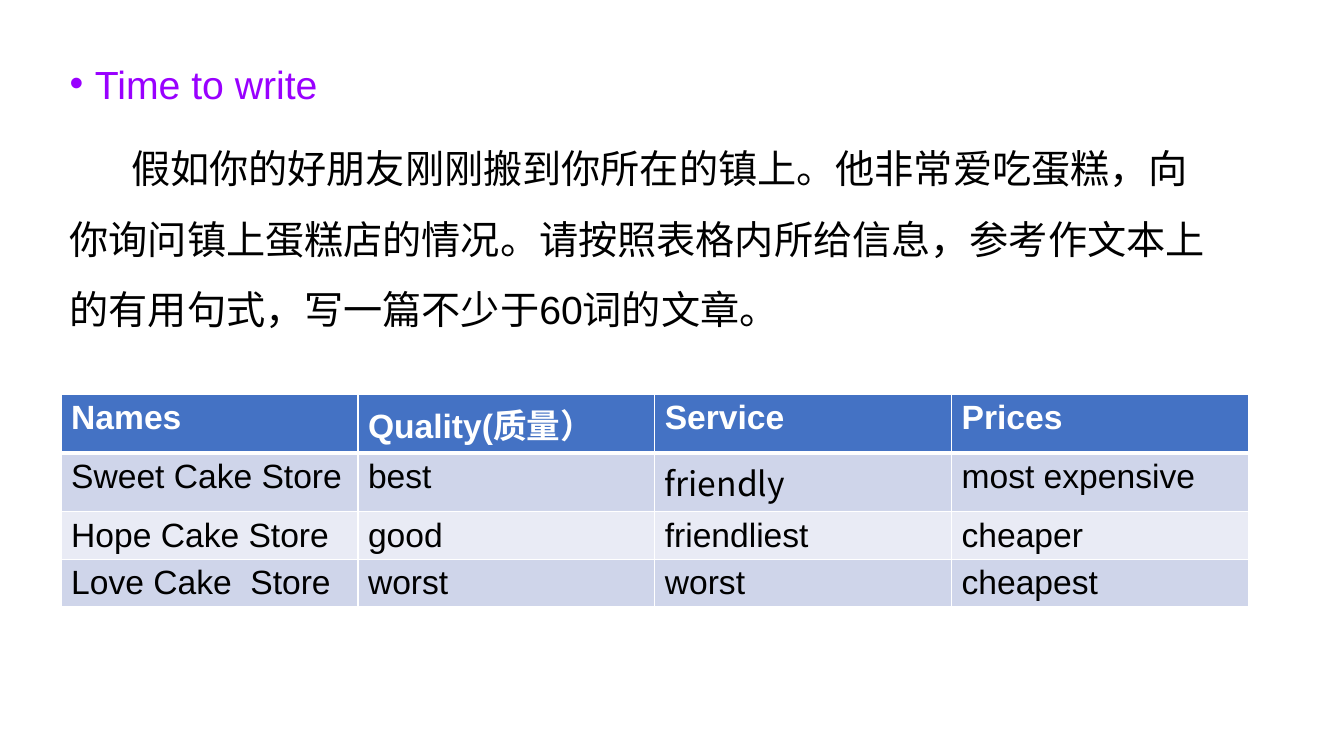
from pptx import Presentation
from pptx.dml.color import RGBColor
from pptx.enum.text import MSO_ANCHOR, MSO_AUTO_SIZE
from pptx.oxml.ns import qn
from pptx.util import Cm, Pt
from lxml.etree import SubElement

PURPLE = RGBColor(0x99, 0x00, 0xFF)
BLACK = RGBColor(0x00, 0x00, 0x00)
WHITE = RGBColor(0xFF, 0xFF, 0xFF)
HEADER_BLUE = RGBColor(0x44, 0x72, 0xC4)
BAND_DARK = RGBColor(0xCF, 0xD5, 0xEA)
BAND_LIGHT = RGBColor(0xE9, 0xEB, 0xF5)
LATIN, CHINESE = "Arial", "Noto Sans CJK SC"


def add_span(para, text, **font_values):
    span = para.add_run()
    span.text = text
    color = font_values.pop("color")
    for name, value in font_values.items():
        setattr(span.font, name, value)
    span.font.color.rgb = color
    SubElement(span.font._element, qn("a:ea"), typeface=CHINESE)


def add_border(cell, side, points):
    line = SubElement(cell._tc.get_or_add_tcPr(), qn(f"a:ln{side}"), w=str(Pt(points)))
    fill = SubElement(line, qn("a:solidFill"))
    SubElement(fill, qn("a:srgbClr"), val=str(WHITE))


deck = Presentation()
deck.slide_width, deck.slide_height = Cm(33.87), Cm(19.05)
page = deck.slides.add_slide(deck.slide_layouts.get_by_name("Title and Content"))
unused_title = page.shapes.title._element
unused_title.getparent().remove(unused_title)

# Heading and writing task
box = page.placeholders[1]
box.left, box.top, box.width, box.height = Cm(1.5), Cm(0.79), Cm(29.21), Cm(12.09)
frame = box.text_frame
frame_format = {"word_wrap": True, "auto_size": MSO_AUTO_SIZE.NONE,
                "vertical_anchor": MSO_ANCHOR.TOP}
for name, value in frame_format.items():
    setattr(frame, name, value)

task = ("假如你的好朋友刚刚搬到你所在的镇上。他非常爱吃蛋糕，向你询问镇上蛋糕店的情况。"
        "请按照表格内所给信息，参考作文本上的有用句式，写一篇不少于60词的文章。")
# text, colour, left margin, first-line indent, space before, bullet
paragraphs = [
    ("Time to write", PURPLE, Cm(0.64), Cm(-0.64), 0, "•"),
    (task, BLACK, Cm(0), Cm(1.55), 10, None),
]
for index, (text, color, margin, indent, before, bullet) in enumerate(paragraphs):
    para = frame.paragraphs[0] if index == 0 else frame.add_paragraph()
    para.line_spacing = 1.5
    para.space_before = Pt(before)
    properties = para._p.get_or_add_pPr()
    properties.set("marL", str(margin))
    properties.set("indent", str(indent))
    if bullet:
        SubElement(properties, qn("a:buFont"), typeface=LATIN)
        SubElement(properties, qn("a:buChar"), char=bullet)
    else:
        SubElement(properties, qn("a:buNone"))
    add_span(para, text, size=Pt(28), name=LATIN, color=color)

# Table of cake stores
rows = [
    ("Names", "Quality(质量）", "Service", "Prices"),
    ("Sweet Cake Store", "best", "friendly", "most expensive"),
    ("Hope Cake Store", "good", "friendliest", "cheaper"),
    ("Love Cake  Store", "worst", "worst", "cheapest"),
]
row_heights = [Cm(1.47), Cm(1.47), Cm(1.2), Cm(1.2)]
row_fills = [HEADER_BLUE, BAND_DARK, BAND_LIGHT, BAND_DARK]
table = page.shapes.add_table(len(rows), len(rows[0]), Cm(1.54), Cm(9.93),
                              Cm(29.92), sum(row_heights)).table
for column in table.columns:
    column.width = Cm(7.48)
for r, texts in enumerate(rows):
    table.rows[r].height = row_heights[r]
    header = r == 0
    for c, text in enumerate(texts):
        cell = table.cell(r, c)
        for side in "LRTB":
            thick = (header and side == "B") or (r == 1 and side == "T")
            add_border(cell, side, 3 if thick else 1)
        cell.fill.solid()
        cell.fill.fore_color.rgb = row_fills[r]
        add_span(cell.text_frame.paragraphs[0], text, size=Pt(24), bold=header,
                 name=CHINESE if text == "friendly" else LATIN,
                 color=WHITE if header else BLACK)

deck.save("out.pptx")
